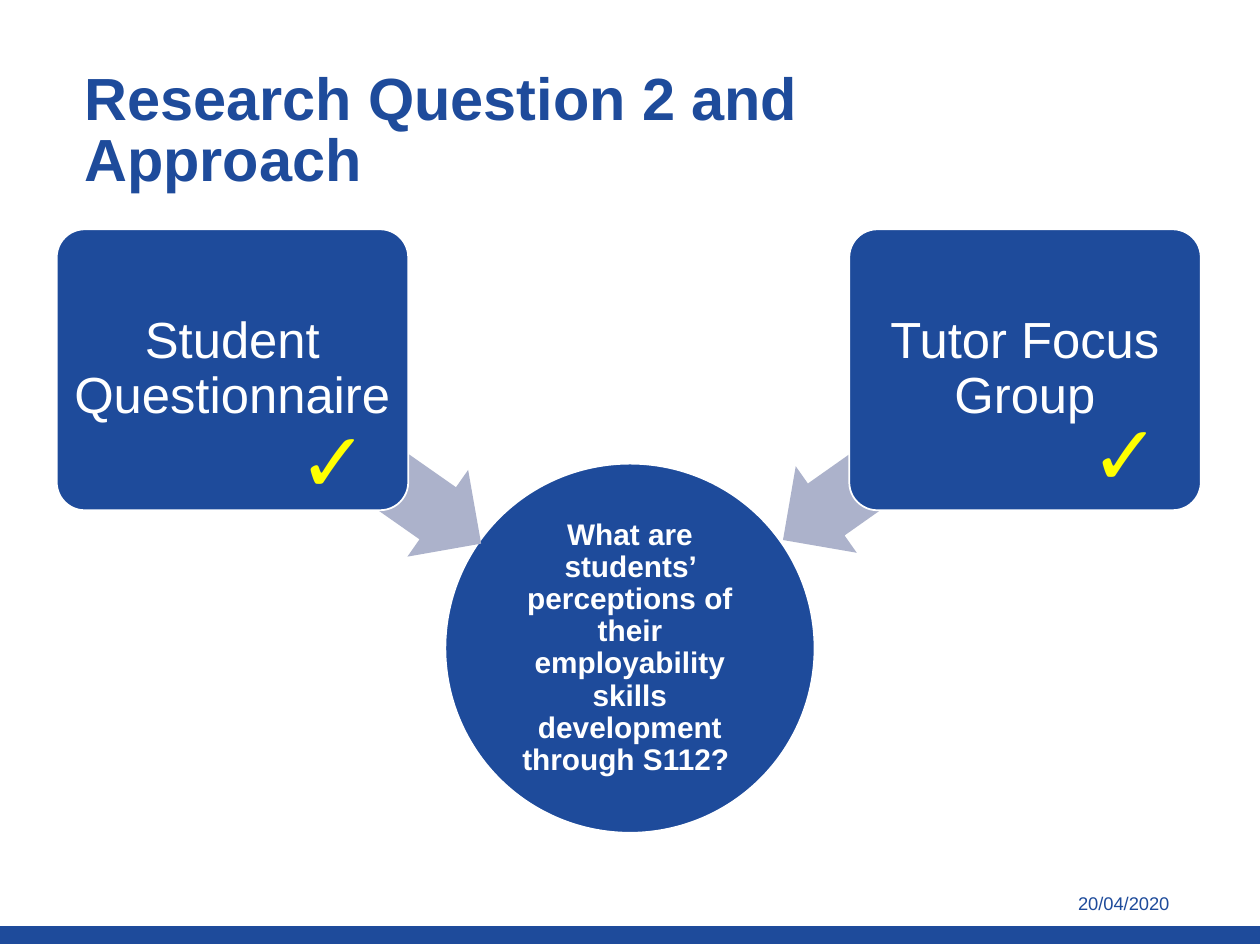
from pptx import Presentation
from pptx.dml.color import RGBColor
from pptx.enum.shapes import MSO_SHAPE
from pptx.enum.text import MSO_ANCHOR, PP_ALIGN
from pptx.util import Inches, Pt

RECT, ROUNDED = MSO_SHAPE.RECTANGLE, MSO_SHAPE.ROUNDED_RECTANGLE
OVAL, ARROW = MSO_SHAPE.OVAL, MSO_SHAPE.LEFT_ARROW
LEFT, CENTER, RIGHT = PP_ALIGN.LEFT, PP_ALIGN.CENTER, PP_ALIGN.RIGHT
TOP, MIDDLE = MSO_ANCHOR.TOP, MSO_ANCHOR.MIDDLE
BLUE = RGBColor(0x1E, 0x4B, 0x9B)
GREY = RGBColor(0xAC, 0xB2, 0xCB)
WHITE = RGBColor(0xFF, 0xFF, 0xFF)
YELLOW = RGBColor(0xFF, 0xFF, 0x00)

# Content
TITLE = "Research Question 2 and Approach"
DATE = "20/04/2020"
QUESTION = ("What are students’ perceptions of their employability skills "
            "development through S112? ")
TICK = "✓"
# label, card left, arrow left, arrow width, arrow rotation, tick left, tick top
METHODS = [
    ("Student Questionnaire", 0.45, 1.49, 2.56, 215, 2.27, 3.19),
    ("Tutor Focus Group", 6.74, 5.99, 2.45, 324.8, 8.56, 3.14),
]

# Layout
WIDTH, HEIGHT = 10, 7.5
CARD_TOP, CARD_W, CARD_H = 1.82, 2.79, 2.23
ARROW_TOP, ARROW_H = 3.16, 0.84
CIRCLE_TOP, CIRCLE_D = 3.68, 2.93
TICK_W, TICK_H = 0.88, 0.91

prs = Presentation()
prs.slide_width, prs.slide_height = Inches(WIDTH), Inches(HEIGHT)
s = prs.slides.add_slide(prs.slide_layouts[6])


def add_shape(kind, box, fill, line=None, adjustments=()):
    sp = s.shapes.add_shape(kind, *map(Inches, box))
    sp.shadow.inherit = False
    sp.fill.solid()
    sp.fill.fore_color.rgb = fill
    if line is None:
        sp.line.fill.background()
    else:
        sp.line.color.rgb = line
        sp.line.width = Pt(1)
    for i, value in enumerate(adjustments):
        sp.adjustments[i] = value
    return sp


def set_text(sp, text, size, color, align=LEFT, anchor=TOP, bold=False,
             spacing=1.0, insets=(0.1, 0.05, 0.1, 0.05), wrap=True):
    tf = sp.text_frame
    tf.word_wrap, tf.vertical_anchor = wrap, anchor
    (tf.margin_left, tf.margin_top,
     tf.margin_right, tf.margin_bottom) = map(Inches, insets)
    p = tf.paragraphs[0]
    p.text, p.alignment, p.line_spacing = text, align, spacing
    p.font.name, p.font.size, p.font.bold = "Arial", Pt(size), bold
    p.font.color.rgb = color


def add_text(box, *args, **kwargs):
    set_text(s.shapes.add_textbox(*map(Inches, box)), *args, **kwargs)


# Footer bar, date and title
add_shape(RECT, (0, 7.36, WIDTH, 0.13), BLUE, BLUE)
add_text((8.3, 7.03, 1.08, 0.28), DATE, 10.5, BLUE, RIGHT)
add_text((0.63, 0.39, 6.52, 0.96), TITLE, 34, BLUE, bold=True, spacing=0.85,
         insets=(0.04, 0.18, 0.02, 0.04))

# Central question
circle = add_shape(OVAL, ((WIDTH - CIRCLE_D) / 2, CIRCLE_TOP, CIRCLE_D, CIRCLE_D),
                   BLUE, WHITE)
set_text(circle, QUESTION, 17, WHITE, CENTER, MIDDLE, bold=True, spacing=0.9,
         insets=(0.01,) * 4)

# Each method: arrow to the question, card over its tail, tick on the card
for label, card_x, arrow_x, arrow_w, angle, tick_x, tick_y in METHODS:
    arrow = add_shape(ARROW, (arrow_x, ARROW_TOP, arrow_w, ARROW_H), GREY,
                      adjustments=(0.6, 0.5))
    arrow.rotation = angle
    card = add_shape(ROUNDED, (card_x, CARD_TOP, CARD_W, CARD_H), BLUE, WHITE, (0.1,))
    set_text(card, label, 29, WHITE, CENTER, MIDDLE, spacing=0.9, insets=(0.06,) * 4)
    add_text((tick_x, tick_y, TICK_W, TICK_H), TICK, 48, YELLOW, wrap=False)

prs.save("out.pptx")
